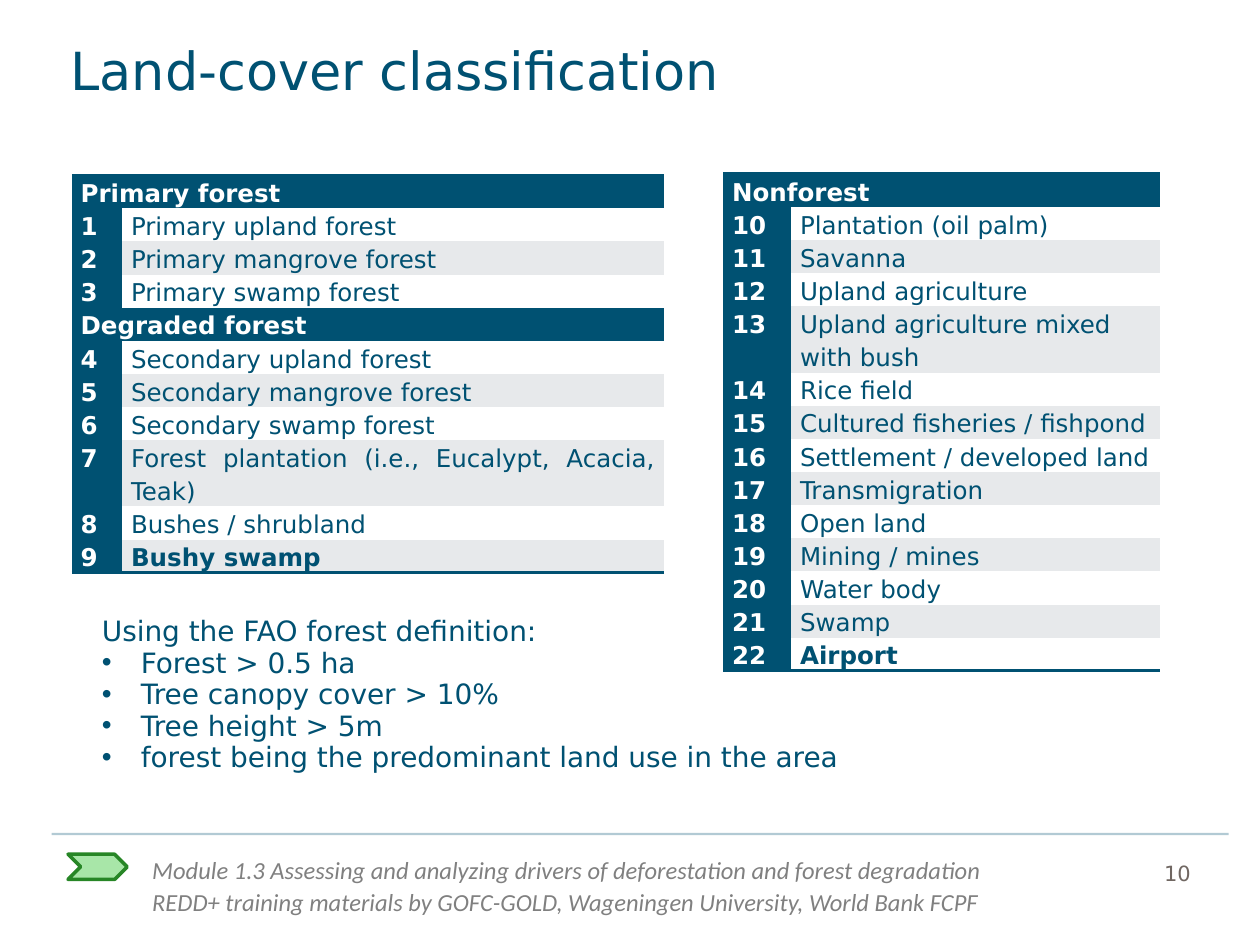
from lxml import etree
from pptx import Presentation
from pptx.dml.color import RGBColor
from pptx.enum.shapes import MSO_CONNECTOR, MSO_SHAPE
from pptx.enum.text import MSO_ANCHOR, MSO_AUTO_SIZE, PP_ALIGN
from pptx.oxml import parse_xml
from pptx.oxml.ns import nsdecls, qn
from pptx.util import Inches, Pt

NAVY = RGBColor(0x00, 0x51, 0x72)
WHITE = RGBColor(0xFF, 0xFF, 0xFF)
BAND = RGBColor(0xE7, 0xE9, 0xEB)
GREY = RGBColor(0x80, 0x80, 0x80)
NUMBER_GREY = RGBColor(0x70, 0x67, 0x62)
LIGHT_GREEN = RGBColor(0xA8, 0xE6, 0xA8)
DARK_GREEN = RGBColor(0x27, 0x86, 0x26)
PLAIN_TABLE = "{2D5ABB26-0587-4C30-8999-92F81FD0307C}"

LEFT_ROWS = [
    "Primary forest",
    ("1", "Primary upland forest"),
    ("2", "Primary mangrove forest"),
    ("3", "Primary swamp forest"),
    "Degraded forest",
    ("4", "Secondary upland forest"),
    ("5", "Secondary mangrove forest"),
    ("6", "Secondary swamp forest"),
    ("7", "Forest plantation (i.e., Eucalypt, Acacia, Teak)"),
    ("8", "Bushes / shrubland"),
    ("9", "Bushy swamp"),
]
RIGHT_ROWS = [
    "Nonforest",
    ("10", "Plantation (oil palm)"),
    ("11", "Savanna"),
    ("12", "Upland agriculture"),
    ("13", "Upland agriculture mixed with bush"),
    ("14", "Rice field"),
    ("15", "Cultured fisheries / fishpond"),
    ("16", "Settlement / developed land"),
    ("17", "Transmigration"),
    ("18", "Open land"),
    ("19", "Mining / mines"),
    ("20", "Water body"),
    ("21", "Swamp"),
    ("22", "Airport"),
]
TABLES = [
    (0.57, 1.39, (0.4, 4.3), LEFT_ROWS, PP_ALIGN.JUSTIFY),
    (5.74, 1.38, (0.54, 2.93), RIGHT_ROWS, PP_ALIGN.LEFT),
]
FOOTER = [
    "Module 1.3 Assessing and analyzing drivers of deforestation and forest degradation",
    "REDD+ training materials by GOFC-GOLD, Wageningen University, World Bank FCPF",
]
DEFINITION = [
    "Using the FAO forest definition:",
    "Forest > 0.5 ha",
    "Tree canopy cover > 10%",
    "Tree height > 5m",
    "forest being the predominant land use in the area",
]
TEXT_BOXES = [
    (1.11, 6.72, 7.73, 0.61, FOOTER, 14, "Calibri", GREY, True),
    (9.14, 6.73, 0.61, 0.33, ["10"], 12, "DejaVu Sans", NUMBER_GREY, True),
    (0.71, 4.84, 6.15, 1.36, DEFINITION, 16, "DejaVu Sans", NAVY, False),
]


def style_text(font, size, name, color):
    font.size = Pt(size)
    font.name = name
    font.color.rgb = color


def fill_cell(cell, text, fill, color, bold, align):
    cell.margin_left = cell.margin_right = Inches(0.07)
    cell.margin_top = cell.margin_bottom = 0
    cell.fill.solid()
    cell.fill.fore_color.rgb = fill
    cell.text = text
    para = cell.text_frame.paragraphs[0]
    para.alignment = align
    para.line_spacing = 1.15
    span = para.runs[0]
    style_text(span.font, 14, "DejaVu Sans", color)
    span.font.bold = bold


deck = Presentation()
deck.slide_width, deck.slide_height = Inches(10), Inches(7.5)
page = deck.slides.add_slide(deck.slide_layouts[5])

title = page.shapes.title
title.left, title.top = Inches(0.54), Inches(0.25)
title.width, title.height = Inches(9.23), Inches(0.87)
frame = title.text_frame
frame.text = "Land-cover classification"
frame.auto_size = MSO_AUTO_SIZE.NONE
frame.vertical_anchor = MSO_ANCHOR.TOP
frame.margin_left, frame.margin_right = Inches(0.02), Inches(0.1)
frame.margin_top, frame.margin_bottom = 0, Inches(0.35)
para = frame.paragraphs[0]
para.alignment = PP_ALIGN.LEFT
para.line_spacing = Pt(40)
style_text(para.runs[0].font, 30, "DejaVu Sans", NAVY)

chevron = page.shapes.add_shape(
    MSO_SHAPE.CHEVRON, Inches(0.54), Inches(6.78), Inches(0.47), Inches(0.2)
)
chevron.shadow.inherit = False
chevron.fill.solid()
chevron.fill.fore_color.rgb = LIGHT_GREEN
chevron.line.color.rgb = DARK_GREEN
chevron.line.width = Pt(2)

rule = page.shapes.add_connector(
    MSO_CONNECTOR.STRAIGHT, Inches(0.41), Inches(6.62), Inches(9.75), Inches(6.62)
)
rule.line.color.rgb = NAVY
rule.line.width = Pt(1.25)
rule_color = rule.line._ln.find(".//" + qn("a:srgbClr"))
etree.SubElement(rule_color, qn("a:alpha"), val="30000")
etree.SubElement(rule._element.spPr, qn("a:effectLst"))

for left, top, widths, rows, align in TABLES:
    table = page.shapes.add_table(
        len(rows), 2, Inches(left), Inches(top), Inches(sum(widths)), Inches(0.2 * len(rows))
    ).table
    table._tbl.tblPr.find(qn("a:tableStyleId")).text = PLAIN_TABLE
    table.horz_banding = False
    for column, width in zip(table.columns, widths):
        column.width = Inches(width)
    for index, row in enumerate(rows):
        table.rows[index].height = Inches(0.2)
        number_cell, name_cell = table.cell(index, 0), table.cell(index, 1)
        if isinstance(row, str):
            number_cell.merge(name_cell)
            fill_cell(number_cell, row, NAVY, WHITE, True, PP_ALIGN.JUSTIFY)
        else:
            number, name = row
            is_last = index == len(rows) - 1
            fill_cell(number_cell, number, NAVY, WHITE, True, PP_ALIGN.JUSTIFY)
            fill_cell(name_cell, name, WHITE if index % 2 else BAND, NAVY, is_last, align)
    for row_index, side in ((0, "lnT"), (len(rows) - 1, "lnB")):
        for cell in table.rows[row_index].cells:
            cell._tc.get_or_add_tcPr().insert(0, parse_xml(
                f'<a:{side} {nsdecls("a")} w="25400"><a:solidFill>'
                f'<a:srgbClr val="{NAVY}"/></a:solidFill></a:{side}>'
            ))

for left, top, width, height, lines, size, font_name, color, wrap in TEXT_BOXES:
    box = page.shapes.add_textbox(Inches(left), Inches(top), Inches(width), Inches(height))
    frame = box.text_frame
    frame.word_wrap = wrap
    frame.text = "\n".join(lines)
    for index, para in enumerate(frame.paragraphs):
        para.alignment = PP_ALIGN.LEFT
        para.line_spacing = Pt(18)
        if lines is DEFINITION and index:
            properties = para._p.get_or_add_pPr()
            properties.set("marL", str(Inches(0.31)))
            properties.set("indent", str(-Inches(0.31)))
            etree.SubElement(properties, qn("a:buFont"), typeface="Arial")
            etree.SubElement(properties, qn("a:buChar"), char="•")
        span = para.runs[0]
        style_text(span.font, size, font_name, color)
        span.font.italic = lines is FOOTER

deck.save("out.pptx")
